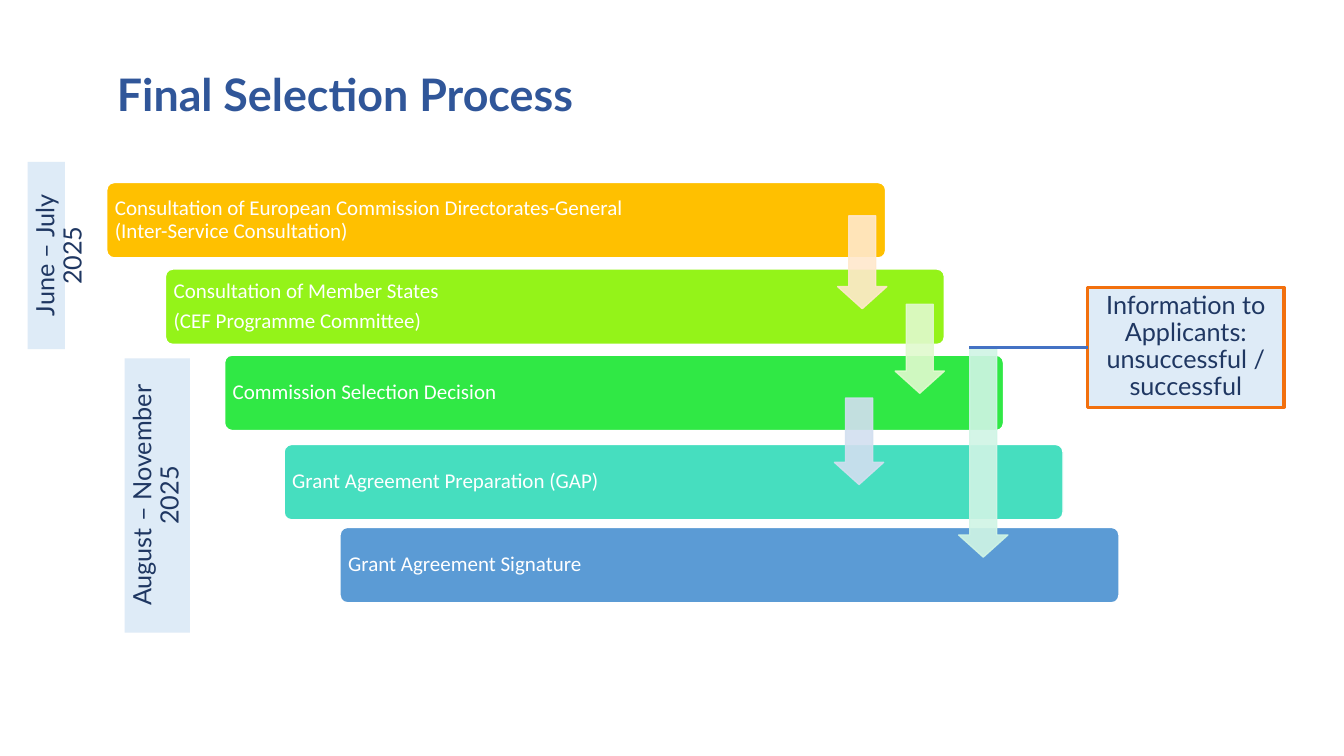
from pptx import Presentation
from pptx.dml.color import RGBColor
from pptx.enum.shapes import MSO_CONNECTOR, MSO_SHAPE
from pptx.enum.text import MSO_ANCHOR, PP_ALIGN
from pptx.oxml.ns import qn
from pptx.util import Cm, Pt
from lxml import etree

WHITE = RGBColor(0xFF, 0xFF, 0xFF)
TITLE_BLUE = RGBColor(0x30, 0x56, 0x99)
NAVY = RGBColor(0x1F, 0x37, 0x62)
PALE_BLUE = RGBColor(0xDE, 0xEB, 0xF7)
ORANGE = RGBColor(0xF2, 0x70, 0x0E)
LINE_BLUE = RGBColor(0x44, 0x72, 0xC4)
AMBER = RGBColor(0xFF, 0xC0, 0x00)
LIME = RGBColor(0x94, 0xF3, 0x19)
GREEN = RGBColor(0x30, 0xE8, 0x45)
TURQUOISE = RGBColor(0x46, 0xDE, 0xBF)
BLUE = RGBColor(0x5B, 0x9B, 0xD5)
PALE_AMBER = RGBColor(0xFF, 0xE8, 0xCC)
PALE_LIME = RGBColor(0xE1, 0xFA, 0xCE)
PALE_GREEN = RGBColor(0xD0, 0xF5, 0xE5)
PALE_STEEL = RGBColor(0xD2, 0xDF, 0xF0)

prs = Presentation()
prs.slide_width, prs.slide_height = Cm(33.87), Cm(19.05)
s = prs.slides.add_slide(prs.slide_layouts[5])


def add_box(kind, left, top, width, height, fill, line=None, line_width=1):
    sp = s.shapes.add_shape(kind, Cm(left), Cm(top), Cm(width), Cm(height))
    sp.shadow.inherit = False
    sp.fill.solid()
    sp.fill.fore_color.rgb = fill
    if line is None:
        sp.line.fill.background()
    else:
        sp.line.color.rgb = line
        sp.line.width = Pt(line_width)
    return sp


def write(tf, lines, align, size, name, color, bold=False):
    tf.word_wrap = True
    for i, line in enumerate(lines):
        p = tf.paragraphs[0] if i == 0 else tf.add_paragraph()
        p.text = line
        p.alignment = align
        p.line_spacing = 0.9
        if i < len(lines) - 1:
            p.space_after = Pt(5.25)
        for key, value in {"size": Pt(size), "name": name, "bold": bold}.items():
            setattr(p.font, key, value)
        p.font.color.rgb = color


# Title
title = s.shapes.title
title.left, title.top, title.width, title.height = Cm(2.69), Cm(1.35), Cm(29.21), Cm(2.18)
title.text_frame.vertical_anchor = MSO_ANCHOR.MIDDLE
write(title.text_frame, ["Final Selection Process"], PP_ALIGN.LEFT, 32, "Lato", TITLE_BLUE, True)

# Staircase of process steps
steps = [
    (2.69, 4.6, AMBER, ["Consultation of European Commission Directorates-General\v(Inter-Service Consultation)"]),
    (4.17, 6.78, LIME, ["Consultation of Member States", "(CEF Programme Committee)"]),
    (5.66, 8.95, GREEN, ["Commission Selection Decision"]),
    (7.16, 11.2, TURQUOISE, ["Grant Agreement Preparation (GAP)"]),
    (8.57, 13.29, BLUE, ["Grant Agreement Signature"]),
]
for left, top, color, lines in steps:
    sp = add_box(MSO_SHAPE.ROUNDED_RECTANGLE, left, top, 19.63, 1.9, color, WHITE)
    sp.adjustments[0] = 0.1
    tf = sp.text_frame
    tf.margin_left = tf.margin_right = Cm(0.15)
    tf.margin_top = tf.margin_bottom = Cm(0.1)
    tf.vertical_anchor = MSO_ANCHOR.MIDDLE
    write(tf, lines, PP_ALIGN.LEFT, 15, "Calibri", WHITE)

# Translucent arrows between steps
arrows = [
    (21.11, 5.44, 2.34, PALE_AMBER),
    (22.56, 7.67, 2.24, PALE_LIME),
    (24.16, 8.76, 5.28, PALE_GREEN),
    (21.03, 10.03, 2.18, PALE_STEEL),
]
for left, top, height, color in arrows:
    sp = add_box(MSO_SHAPE.DOWN_ARROW, left, top, 1.24, height, color, color)
    sp.adjustments[0], sp.adjustments[1] = 0.55, 0.45
    for clr in sp._element.spPr.iter(qn("a:srgbClr")):
        etree.SubElement(clr, qn("a:alpha"), val="90000")

# Applicant information and its connector
info = add_box(MSO_SHAPE.RECTANGLE, 27.41, 7.24, 4.95, 3.02, PALE_BLUE, ORANGE, 2.25)
info.text_frame.vertical_anchor = MSO_ANCHOR.TOP
write(info.text_frame, ["Information to Applicants: unsuccessful / successful"],
      PP_ALIGN.CENTER, 18, "Lato", NAVY)
link = s.shapes.add_connector(MSO_CONNECTOR.STRAIGHT, Cm(24.43), Cm(8.75), Cm(27.41), Cm(8.75))
link.end_connect(info, 1)
link.line.color.rgb = LINE_BLUE
link.line.width = Pt(2.25)
etree.SubElement(link._element.spPr, qn("a:effectLst"))

# Rotated period labels
periods = [
    (-1.19, 5.97, 4.72, 0.94, "June – July 2025"),
    (0.51, 11.66, 6.91, 1.65, "August – November 2025"),
]
for left, top, width, height, text in periods:
    sp = add_box(MSO_SHAPE.RECTANGLE, left, top, width, height, PALE_BLUE)
    sp.rotation = 270
    sp.text_frame.vertical_anchor = MSO_ANCHOR.TOP
    write(sp.text_frame, [text], PP_ALIGN.CENTER, 18, "Lato", NAVY)

prs.save("out.pptx")
